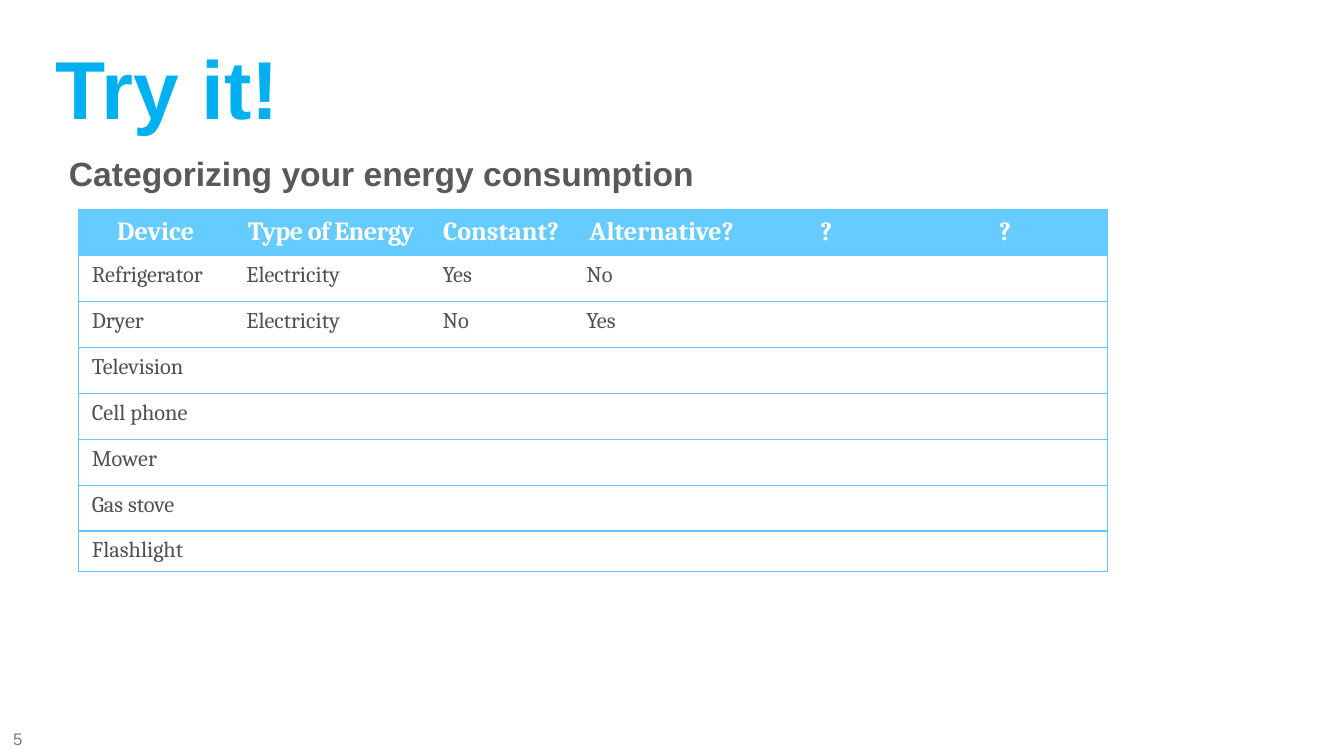
"""Build the slide with the energy consumption table."""
import dataclasses

import lxml.etree
import pptx
import pptx.dml.color
import pptx.enum.text
import pptx.oxml.ns
import pptx.util


@dataclasses.dataclass(frozen=True)
class TextStyle:
    """Font, size in points, colour and weight of a run."""
    font: str
    size: int
    colour: str
    bold: bool = False


class Theme:
    """Colours, type styles and line width of the slide."""
    title = TextStyle("Arial", 44, "00B0F0", True)
    subtitle = TextStyle("Arial", 18, "595959", True)
    number = TextStyle("Arial", 9, "808080")
    header = TextStyle("Cambria", 14, "FFFFFF", True)
    body = TextStyle("Cambria", 12, "505153")
    header_fill = "66CCFF"
    border = "60C9FD"
    border_width = 0.75


GRID_COLUMNS = 100
GRID_ROWS = 56.25
COLUMN_WIDTHS = (11.5, 14.6, 10.7, 13.2, 11.3, 15.3)
TABLE_HEIGHT = 26.9
LAST_ROW_HEIGHT = 3
HEADERS = ("Device", "Type of Energy", "Constant?", "Alternative?", "?", "?")
DEVICES = (
    ("Refrigerator", "Electricity", "Yes", "No"),
    ("Dryer", "Electricity", "No", "Yes"),
    ("Television",),
    ("Cell phone",),
    ("Mower",),
    ("Gas stove",),
    ("Flashlight",),
)


def grid(units):
    """Turn grid units into a length, ten units to the inch."""
    return pptx.util.Inches(units / 10)


def colour_of(value):
    """Return the colour object for a hexadecimal value."""
    return pptx.dml.color.RGBColor.from_string(value)


def add_run(paragraph, text, style):
    """Add one styled run to a paragraph."""
    run = paragraph.add_run()
    run.text = text
    run.font.name = style.font
    run.font.size = pptx.util.Pt(style.size)
    run.font.bold = style.bold
    run.font.color.rgb = colour_of(style.colour)
    return run


def fill_text_frame(shape, text, style, anchor):
    """Write one line of text into a shape."""
    frame = shape.text_frame
    frame.word_wrap = True
    frame.auto_size = pptx.enum.text.MSO_AUTO_SIZE.NONE
    frame.vertical_anchor = anchor
    paragraph = frame.paragraphs[0]
    paragraph.alignment = pptx.enum.text.PP_ALIGN.LEFT
    add_run(paragraph, text, style)
    return frame


def add_title(slide, text, box):
    """Place and format the title placeholder."""
    title = slide.shapes.title
    title.left, title.top, title.width, title.height = map(grid, box)
    frame = fill_text_frame(title, text, Theme.title, pptx.enum.text.MSO_ANCHOR.BOTTOM)
    frame.margin_bottom = grid(0.15)
    frame.paragraphs[0].line_spacing = 1.0


def add_text(slide, text, style, box, anchor):
    """Add a text box on the grid."""
    shape = slide.shapes.add_textbox(*map(grid, box))
    fill_text_frame(shape, text, style, anchor)


def set_borders(cell, visible):
    """Draw the visible sides of a cell and hide the others."""
    properties = cell._tc.get_or_add_tcPr()
    qualified = pptx.oxml.ns.qn
    for side in "LRTB":
        line = lxml.etree.SubElement(properties, qualified(f"a:ln{side}"))
        if side in visible:
            line.set("w", str(pptx.util.Pt(Theme.border_width)))
            fill = lxml.etree.SubElement(line, qualified("a:solidFill"))
            lxml.etree.SubElement(fill, qualified("a:srgbClr"), val=Theme.border)
        else:
            lxml.etree.SubElement(line, qualified("a:noFill"))


def fill_cell(cell, text, is_header):
    """Write the text of a cell and set its fill."""
    style = Theme.header if is_header else Theme.body
    paragraph = cell.text_frame.paragraphs[0]
    if is_header:
        paragraph.alignment = pptx.enum.text.PP_ALIGN.CENTER
        cell.fill.solid()
        cell.fill.fore_color.rgb = colour_of(Theme.header_fill)
    else:
        cell.fill.background()
    if text:
        run = add_run(paragraph, text, style)
        if text == "Type of Energy":
            run.font._element.set("spc", "-30")
    else:
        lxml.etree.SubElement(paragraph._p, pptx.oxml.ns.qn("a:endParaRPr"),
                              sz=str(style.size * 100))


def add_device_table(slide, left, top):
    """Add the table of devices with its header row."""
    rows = (HEADERS,) + DEVICES
    shape = slide.shapes.add_table(len(rows), len(HEADERS), grid(left), grid(top),
                                   grid(sum(COLUMN_WIDTHS)), grid(TABLE_HEIGHT))
    table = shape.table
    table.horz_banding = False
    for column, width in zip(table.columns, COLUMN_WIDTHS):
        column.width = grid(width)
    for row in table.rows:
        row.height = grid((TABLE_HEIGHT - LAST_ROW_HEIGHT) / (len(rows) - 1))
    table.rows[len(rows) - 1].height = grid(LAST_ROW_HEIGHT)
    for row_index, texts in enumerate(rows):
        for column_index in range(len(HEADERS)):
            cell = table.cell(row_index, column_index)
            sides = {0: "LTB", len(HEADERS) - 1: "RTB"}.get(column_index, "TB")
            set_borders(cell, sides)
            text = texts[column_index] if column_index < len(texts) else ""
            fill_cell(cell, text, row_index == 0)


def main():
    """Build and save the presentation."""
    presentation = pptx.Presentation()
    presentation.slide_width = grid(GRID_COLUMNS)
    presentation.slide_height = grid(GRID_ROWS)
    slide = presentation.slides.add_slide(presentation.slide_layouts[5])
    anchors = pptx.enum.text.MSO_ANCHOR
    add_text(slide, "5", Theme.number, (0, 53.5, 5.8, 3), anchors.MIDDLE)
    add_device_table(slide, 5.84, 15.62)
    add_title(slide, "Try it!", (3.15, 2.3, 60.8, 8))
    add_text(slide, "Categorizing your energy consumption", Theme.subtitle,
             (4.15, 10.9, 64.2, 4), anchors.TOP)
    presentation.save("out.pptx")


if __name__ == "__main__":
    main()
